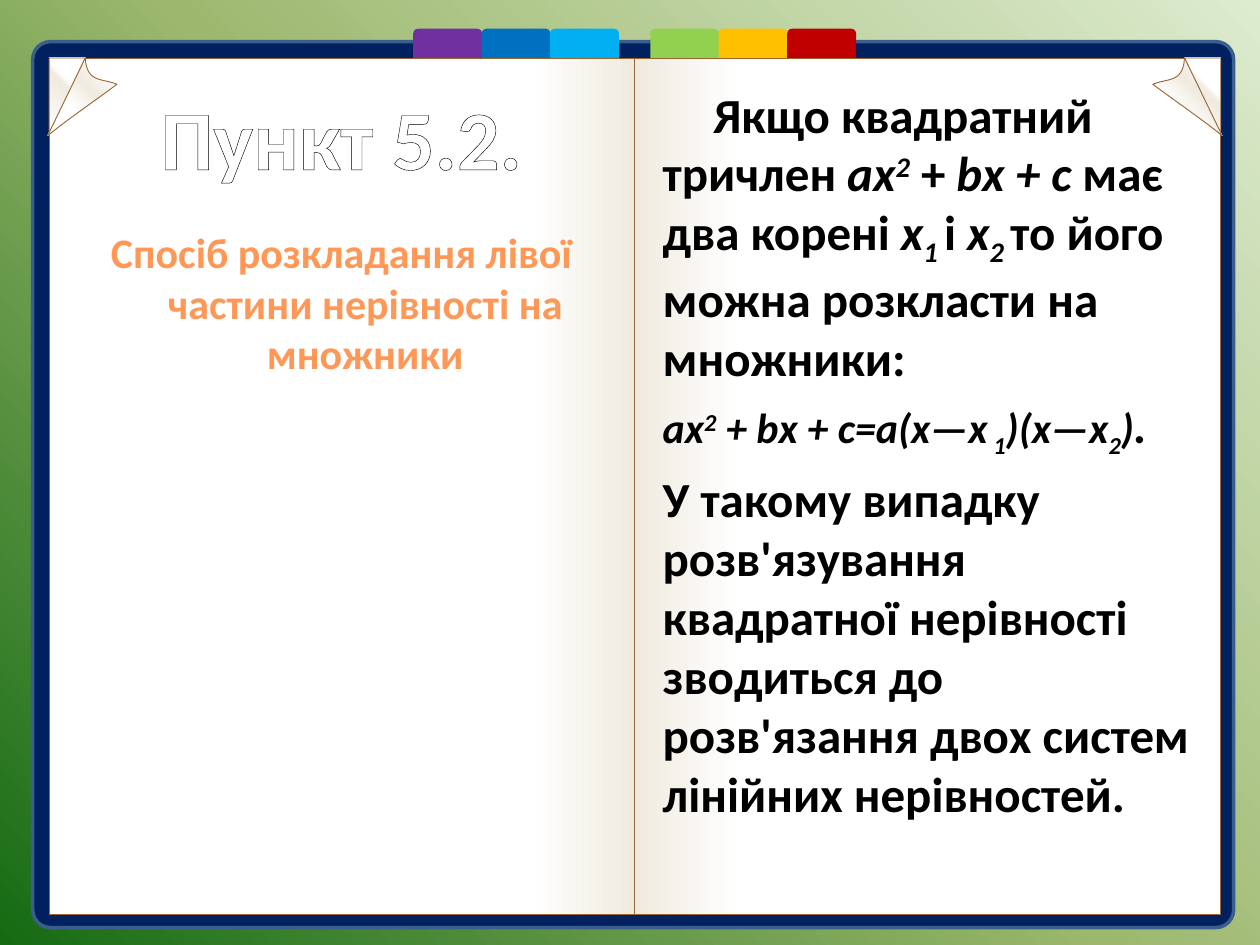
"""Build an open-book slide about factoring a quadratic inequality."""
import pptx
import pptx.util
import pptx.dml.color
import pptx.enum.shapes
import pptx.enum.text
import pptx.oxml
import pptx.oxml.ns

Cm, Pt = pptx.util.Cm, pptx.util.Pt
SHAPE = pptx.enum.shapes.MSO_SHAPE
ALIGN = pptx.enum.text.PP_ALIGN
ANCHOR = pptx.enum.text.MSO_ANCHOR
qn = pptx.oxml.ns.qn

COLORS = {
    "cover": "002060", "cover_edge": "3A5F8C", "paper_edge": "996633",
    "white": "FFFFFF", "shade": "F0EBE0", "black": "000000",
    "light": "DDEBCF", "leaf": "9CB86E", "forest": "156B13",
    "rust": "9D4700", "orange": "FF9856", "cream": "FFF5F1",
    "purple": "7030A0", "blue": "0070C0", "sky": "00B0F0",
    "lime": "92D050", "gold": "FFC000", "red": "C00000",
}
BACKDROP = [(0, "light"), (50, "leaf"), (100, "forest")]
PAGE = [(0, "white"), (82, "white"), (100, "shade")]
FLAP = [(0, "white"), (57, "shade"), (65, "white")]
CURL = [(12, "white"), (40, "shade"), (65, "white")]
HEADING = [(0, "rust"), (78, "orange"), (100, "cream")]

SPINE = 12.8
PAGE_TOP, PAGE_W, PAGE_H = 1.17, 11.81, 17.27
TAB_TOP, TAB_W, TAB_H, TAB_STEP = 0.58, 1.39, 0.59, 1.38
TABS = [(8.33, ("purple", "blue", "sky")), (13.11, ("lime", "gold", "red"))]
FLAP_PATH = [(23.88, 1.17), (24.61, 2.69), (24.61, 1.17)]
CURL_PATH = [
    (23.24, 1.7),
    ((23.75, 2.08), (24.31, 2.46), (24.64, 2.74)),
    (23.88, 1.17),
    ((23.85, 1.68), (23.55, 1.57), (23.24, 1.7)),
]

STYLES = {
    "": {}, "i": {"italic": True},
    "sup": {"italic": True, "baseline": 30}, "sub": {"italic": True, "baseline": -25},
    "end": {"italic": True, "size": Pt(28)},
}
TITLE = [{"size": 48, "align": ALIGN.CENTER, "runs": [("Пункт 5.2.", "")]}]
SUBTITLE = [{"size": 24, "align": ALIGN.CENTER, "margin": 0.96, "indent": -0.96,
             "runs": [("Спосіб розкладання лівої частини нерівності на множники", "")]}]
RULE = [
    {"size": 28, "indent": 1.02, "runs": [
        ("Якщо квадратний тричлен", ""), (" ах", "i"), ("2", "sup"), (" + ", ""),
        ("bх + с ", "i"), ("має два корені ", ""), ("х", "i"), ("1 ", "sub"),
        ("і ", ""), ("x", "i"), ("2 ", "sub"),
        ("то його можна розкласти на множники:", "")]},
    {"size": 24, "runs": [
        ("ах", "i"), ("2", "sup"), (" + bх + с=а(х—х", "i"), (" 1", "sub"),
        (")(х—х", "i"), ("2", "sub"), (")", "i"), (".", "end")]},
    {"size": 28, "runs": [
        ("У такому випадку розв'язування квадратної нерівності зводиться до "
         "розв'язання двох систем лінійних нерівностей.", "")]},
]


def rgb(name):
    return pptx.dml.color.RGBColor.from_string(COLORS[name])


def set_gradient(fill, owner, stops, angle):
    fill.gradient()
    grad = next(owner.iter(qn("a:gradFill")))
    stop_list = grad.find(qn("a:gsLst"))
    for old in list(stop_list):
        stop_list.remove(old)
    for pos, name in stops:
        stop = stop_list.makeelement(qn("a:gs"), {"pos": str(pos * 1000)})
        color = stop.makeelement(qn("a:srgbClr"), {"val": COLORS[name]})
        stop.append(color)
        stop_list.append(stop)
    grad.find(qn("a:lin")).set("ang", str(angle * 60000))


def paint(sp, fill, line=None, width=0.5, angle=0):
    sp.shadow.inherit = False
    if isinstance(fill, str):
        sp.fill.solid()
        sp.fill.fore_color.rgb = rgb(fill)
    else:
        set_gradient(sp.fill, sp._element, fill, angle)
    if line:
        sp.line.color.rgb = rgb(line)
        sp.line.width = Pt(width)
    else:
        sp.line.fill.background()


def add_box(s, kind, box, *style, **options):
    sp = s.shapes.add_shape(kind, *map(Cm, box))
    paint(sp, *style, **options)
    return sp


def flatten(path, steps=12):
    points = [path[0]]
    for part in path[1:]:
        if isinstance(part[0], tuple):
            curve = (points[-1], *part)
            for k in range(1, steps + 1):
                t = k / steps
                weights = ((1 - t) ** 3, 3 * t * (1 - t) ** 2, 3 * t * t * (1 - t), t ** 3)
                points.append(tuple(sum(w * c[axis] for w, c in zip(weights, curve))
                                    for axis in (0, 1)))
        else:
            points.append(part)
    return points


def add_corners(s, path, stops, angle):
    for mirrored in (False, True):
        points = [(Cm(2 * SPINE - x if mirrored else x), Cm(y)) for x, y in flatten(path)]
        builder = s.shapes.build_freeform(*points[0], scale=1.0)
        builder.add_line_segments(points[1:], close=True)
        paint(builder.convert_to_shape(), stops, "paper_edge", angle=angle)


def add_text(s, box, paragraphs, color="black", anchor=ANCHOR.TOP):
    tf = s.shapes.add_textbox(*map(Cm, box)).text_frame
    tf.word_wrap = True
    tf.vertical_anchor = anchor
    runs = []
    for n, item in enumerate(paragraphs):
        p = tf.add_paragraph() if n else tf.paragraphs[0]
        p.alignment = item.get("align", ALIGN.LEFT)
        if n:
            p.space_before = Pt(0.2 * item["size"])
        props = p._p.get_or_add_pPr()
        props.set("marL", str(Cm(item.get("margin", 0))))
        props.set("indent", str(Cm(item.get("indent", 0))))
        for text, style in item["runs"]:
            r = p.add_run()
            r.text = text
            r.font.color.rgb = rgb(color)
            look = {"name": "Calibri", "size": Pt(item["size"]), "bold": True, **STYLES[style]}
            baseline = look.pop("baseline", 0)
            for key, value in look.items():
                setattr(r.font, key, value)
            if baseline:
                r._r.get_or_add_rPr().set("baseline", str(baseline * 1000))
            runs.append(r)
    return runs


def main():
    prs = pptx.Presentation()
    prs.slide_width, prs.slide_height = Cm(25.4), Cm(19.05)
    s = prs.slides.add_slide(prs.slide_layouts[6])
    set_gradient(s.background.fill, s._element, BACKDROP, 135)

    cover = add_box(s, SHAPE.ROUNDED_RECTANGLE, (0.66, 0.84, 24.21, 17.86),
                    "cover", "cover_edge", width=2)
    cover.adjustments[0] = 0.02
    for left, angle in ((SPINE - PAGE_W, 0), (SPINE, 180)):
        add_box(s, SHAPE.RECTANGLE, (left, PAGE_TOP, PAGE_W, PAGE_H),
                PAGE, "paper_edge", angle=angle)
    add_corners(s, FLAP_PATH, FLAP, 315)

    title = add_text(s, (1.27, 1.57, 11.23, 2.36), TITLE, "white", ANCHOR.MIDDLE)[0]
    outline = pptx.oxml.parse_xml(
        f'<a:ln {pptx.oxml.ns.nsdecls("a")} w="{Pt(0.75)}"><a:solidFill>'
        f'<a:srgbClr val="{COLORS["black"]}"/></a:solidFill></a:ln>')
    title._r.get_or_add_rPr().insert(0, outline)
    add_text(s, (13.11, 1.57, 11.51, 16.28), RULE)

    for left, names in TABS:
        for n, name in enumerate(names):
            add_box(s, SHAPE.ROUND_2_SAME_RECTANGLE,
                    (left + n * TAB_STEP, TAB_TOP, TAB_W, TAB_H), name)
    subtitle = add_text(s, (1.27, 4.45, 11.23, 13.41), SUBTITLE)[0]
    set_gradient(subtitle.font.fill, subtitle._r, HEADING, 90)
    add_corners(s, CURL_PATH, CURL, 135)
    prs.save("out.pptx")


if __name__ == "__main__":
    main()
